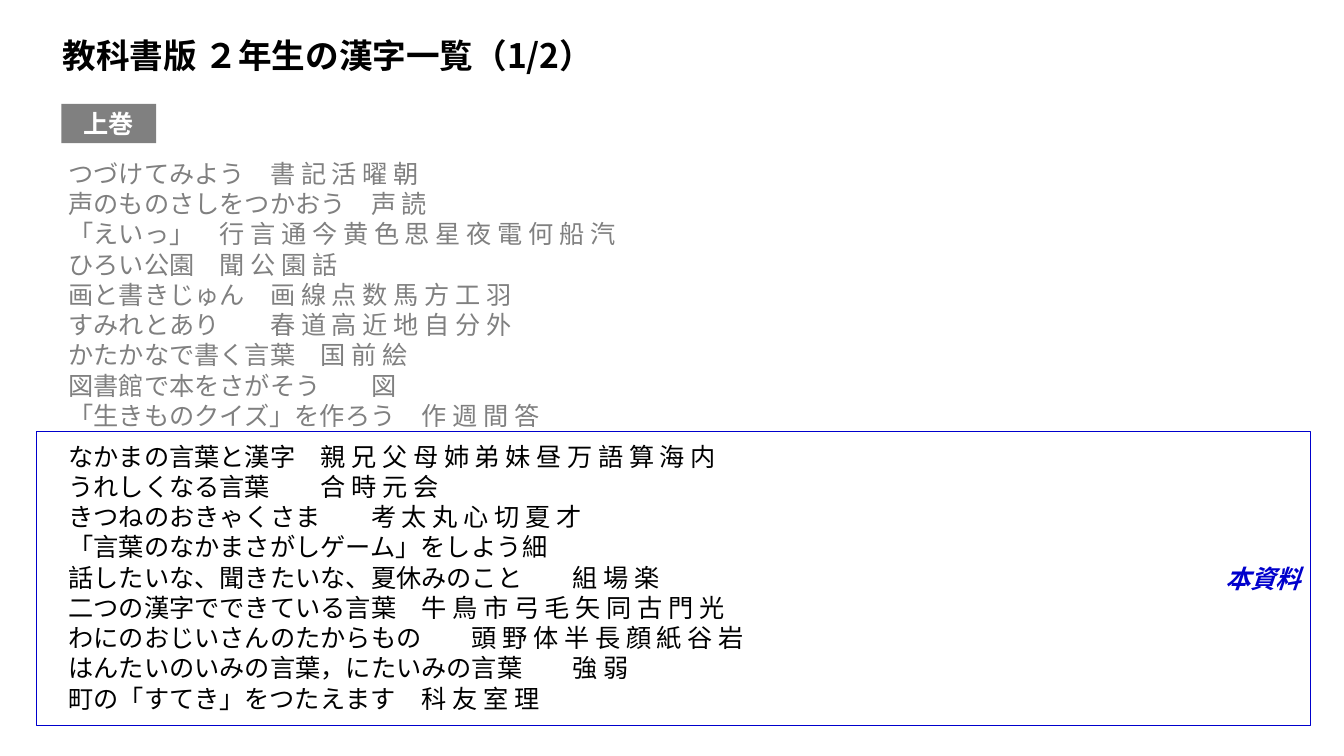
from lxml.etree import SubElement
from pptx import Presentation
from pptx.dml.color import RGBColor
from pptx.enum.shapes import MSO_SHAPE
from pptx.enum.text import MSO_ANCHOR, MSO_AUTO_SIZE, PP_ALIGN
from pptx.oxml.ns import qn
from pptx.util import Inches, Pt

FONT = "Noto Sans CJK JP"
BLACK = RGBColor(0x00, 0x00, 0x00)
GRAY = RGBColor(0x80, 0x80, 0x80)
WHITE = RGBColor(0xFF, 0xFF, 0xFF)
BLUE = RGBColor(0x00, 0x00, 0xCC)

KANJI_TAB = 4.99
LINE_PITCH = Pt(21.6)
GROUP_GAP = Pt(7.5)

EARLIER_UNITS = [
    ("つづけてみよう", "書記活曜朝"),
    ("声のものさしをつかおう", "声読"),
    ("「えいっ」", "行言通今黄色思星夜電何船汽"),
    ("ひろい公園", "聞公園話"),
    ("画と書きじゅん", "画線点数馬方工羽"),
    ("すみれとあり", "春道高近地自分外"),
    ("かたかなで書く言葉", "国前絵"),
    ("図書館で本をさがそう", "図"),
    ("「生きものクイズ」を作ろう", "作週間答"),
]
CURRENT_UNITS = [
    ("なかまの言葉と漢字", "親兄父母姉弟妹昼万語算海内"),
    ("うれしくなる言葉", "合時元会"),
    ("きつねのおきゃくさま", "考太丸心切夏才"),
    ("「言葉のなかまさがしゲーム」をしよう", "細"),
    ("話したいな、聞きたいな、夏休みのこと", "組場楽"),
    ("二つの漢字でできている言葉", "牛鳥市弓毛矢同古門光"),
    ("わにのおじいさんのたからもの", "頭野体半長顔紙谷岩"),
    ("はんたいのいみの言葉，にたいみの言葉", "強弱"),
    ("町の「すてき」をつたえます", "科友室理"),
]


def place(sp, box):
    for name, value in zip(("left", "top", "width", "height"), box):
        setattr(sp, name, Inches(value))


def write(p, text, color, size=18, **formats):
    r = p.add_run()
    r.text = text
    for name, value in {"name": FONT, "size": Pt(size), **formats}.items():
        setattr(r.font, name, value)
    r.font.color.rgb = color
    SubElement(r.font._element, qn("a:ea"), typeface=FONT)


def set_frame(tf, anchor):
    formats = {
        "word_wrap": True,
        "auto_size": MSO_AUTO_SIZE.NONE,
        "vertical_anchor": anchor,
    }
    for name, value in formats.items():
        setattr(tf, name, value)


def add_title(s, box, text):
    sp = s.shapes.title
    place(sp, box)
    set_frame(sp.text_frame, MSO_ANCHOR.MIDDLE)
    p = sp.text_frame.paragraphs[0]
    p.alignment = PP_ALIGN.LEFT
    write(p, text, BLACK, 24, bold=True)


def set_columns(p):
    pPr = p._p.get_or_add_pPr()
    pPr.set("marL", "0")
    pPr.set("indent", "0")
    SubElement(pPr, qn("a:buNone"))
    tabs = SubElement(pPr, qn("a:tabLst"))
    SubElement(tabs, qn("a:tab"), pos=str(Inches(KANJI_TAB)), algn="l")


def add_units(s, box, groups):
    sp = s.placeholders[1]
    place(sp, box)
    tf = sp.text_frame
    set_frame(tf, MSO_ANCHOR.TOP)
    p = None
    for g, (units, color) in enumerate(groups):
        for i, (unit, kanji) in enumerate(units):
            p = tf.add_paragraph() if p else tf.paragraphs[0]
            p.line_spacing = LINE_PITCH
            p.space_before = GROUP_GAP if g and i == 0 else Pt(0)
            p.space_after = Pt(0)
            set_columns(p)
            write(p, f"{unit}\t{' '.join(kanji)}", color)


def add_label_box(s, box, text, color, align, fill=None, line=None, italic=None):
    sp = s.shapes.add_shape(MSO_SHAPE.RECTANGLE, *map(Inches, box))
    sp.shadow.inherit = False
    if fill:
        sp.fill.solid()
        sp.fill.fore_color.rgb = fill
    else:
        sp.fill.background()
    if line:
        sp.line.color.rgb = line
        sp.line.width = Pt(1)
    else:
        sp.line.fill.background()
    set_frame(sp.text_frame, MSO_ANCHOR.MIDDLE)
    p = sp.text_frame.paragraphs[0]
    p.alignment = align
    write(p, text, color, bold=True, italic=italic)


def build_kanji_list(prs):
    s = prs.slides.add_slide(prs.slide_layouts[1])
    add_units(s, (0.58, 1.52, 9.56, 5.84), [(EARLIER_UNITS, GRAY), (CURRENT_UNITS, BLACK)])
    add_title(s, (0.52, 0.3, 9.69, 0.5), "教科書版 ２年生の漢字一覧（1/2）")
    add_label_box(s, (0.61, 1.03, 0.94, 0.39), "上巻", WHITE, PP_ALIGN.CENTER, fill=GRAY)
    add_label_box(s, (0.36, 4.28, 12.64, 2.92), "本資料", BLUE, PP_ALIGN.RIGHT,
                  line=BLUE, italic=True)


def main():
    prs = Presentation()
    prs.slide_width, prs.slide_height = Inches(13.33), Inches(7.5)
    build_kanji_list(prs)
    prs.save("out.pptx")


if __name__ == "__main__":
    main()
